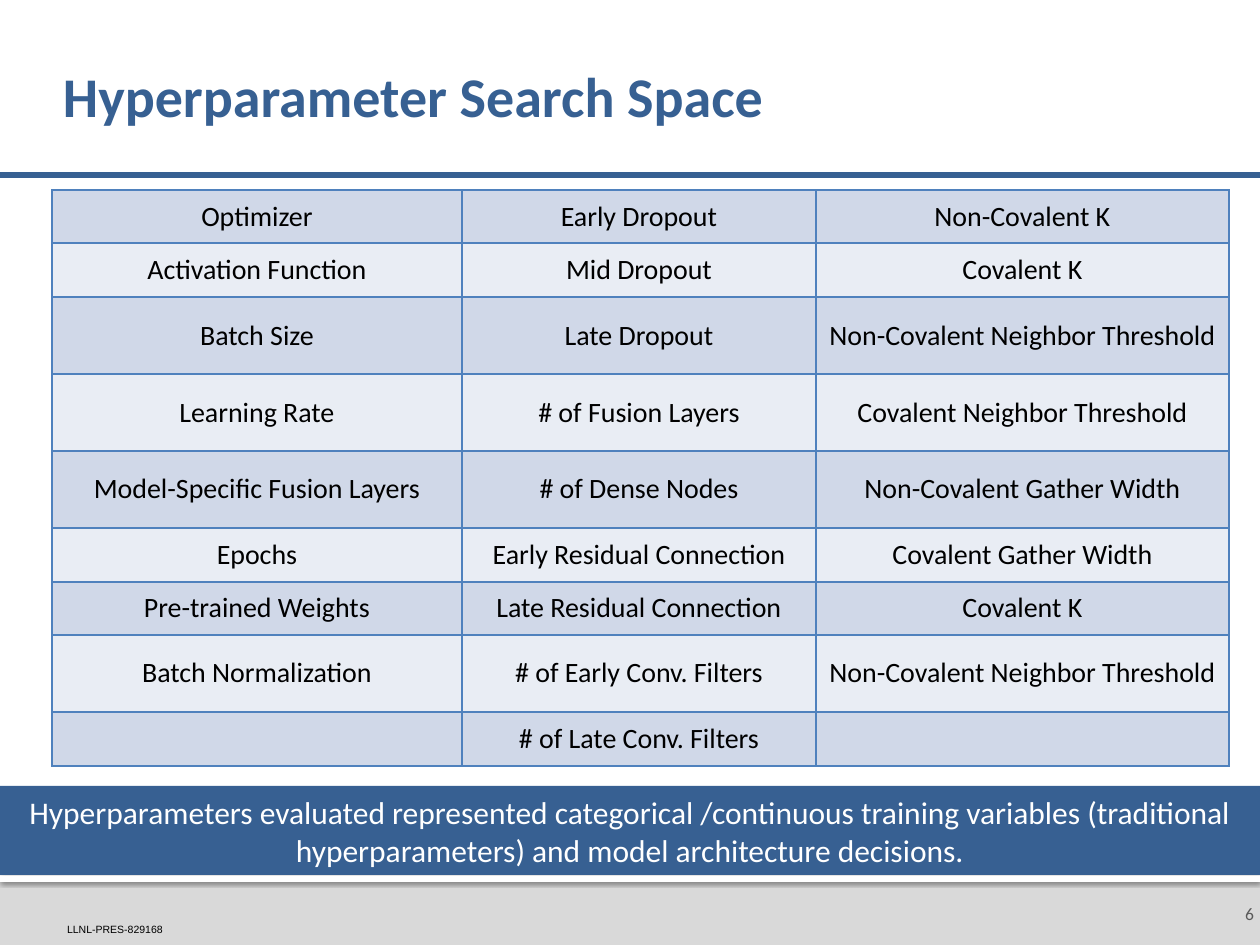
from dataclasses import dataclass

from lxml.etree import SubElement
from pptx import Presentation
from pptx.dml.color import RGBColor
from pptx.enum.shapes import MSO_CONNECTOR, MSO_SHAPE
from pptx.enum.text import MSO_ANCHOR as Anchor
from pptx.enum.text import MSO_AUTO_SIZE as AutoSize
from pptx.enum.text import PP_ALIGN as Align
from pptx.oxml.ns import qn
from pptx.util import Emu, Pt

EMU_PER_PX = 914400 / 126


@dataclass(frozen=True)
class Theme:
    font: str = "Calibri"
    code_font: str = "Arial"
    blue: str = "376092"
    border: str = "4F81BD"
    bands: tuple = ("D0D8E8", "E9EDF4")
    footer: str = "D9D9D9"
    gray: str = "595959"
    white: str = "FFFFFF"
    black: str = "000000"
    title_size: int = 32
    banner_size: int = 18
    cell_size: int = 16
    number_size: int = 10
    code_size: int = 6


THEME = Theme()

SHORT, TALL = 54, 77
COLUMN_WIDTHS = (410, 354, 413)
ROW_HEIGHTS = (SHORT - 1, SHORT, TALL, TALL, TALL, SHORT, SHORT - 1, TALL, SHORT)
HYPERPARAMETERS = (
    ("Optimizer", "Early Dropout", "Non-Covalent K"),
    ("Activation Function", "Mid Dropout", "Covalent K"),
    ("Batch Size", "Late Dropout", "Non-Covalent Neighbor Threshold"),
    ("Learning Rate", "# of Fusion Layers", "Covalent Neighbor Threshold"),
    ("Model-Specific Fusion Layers", "# of Dense Nodes", "Non-Covalent Gather Width"),
    ("Epochs", "Early Residual Connection", "Covalent Gather Width"),
    ("Pre-trained Weights", "Late Residual Connection", "Covalent K"),
    ("Batch Normalization", "# of Early Conv. Filters", "Non-Covalent Neighbor Threshold"),
    ("", "# of Late Conv. Filters", ""),
)


def px(length):
    return Emu(round(length * EMU_PER_PX))


def color(value):
    return RGBColor.from_string(value)


def write(frame, text, size, fill, font=THEME.font, bold=False,
          align=Align.LEFT, anchor=Anchor.MIDDLE, spacing=None):
    """Put one formatted paragraph into a text frame."""
    frame.word_wrap = True
    frame.vertical_anchor = anchor
    paragraph = frame.paragraphs[0]
    paragraph.alignment = align
    if spacing:
        paragraph.line_spacing = spacing
    if text:
        run = paragraph.add_run()
        run.text = text
        run.font.name = font
        run.font.size = Pt(size)
        run.font.bold = bold
        run.font.color.rgb = color(fill)


def add_text(slide, box, text, margins, grow=False, **text_format):
    shape = slide.shapes.add_textbox(*map(px, box))
    frame = shape.text_frame
    (frame.margin_left, frame.margin_top,
     frame.margin_right, frame.margin_bottom) = map(px, margins)
    write(frame, text, **text_format)
    if grow:
        frame.auto_size = AutoSize.SHAPE_TO_FIT_TEXT
    return shape


def add_bar(slide, box, fill):
    shape = slide.shapes.add_shape(MSO_SHAPE.RECTANGLE, *map(px, box))
    shape.shadow.inherit = False
    shape.fill.solid()
    shape.fill.fore_color.rgb = color(fill)
    shape.line.fill.background()
    return shape


def add_shadow(shape):
    effects = shape.element.spPr.find(qn("a:effectLst"))
    shadow = SubElement(effects, qn("a:outerShdw"), blurRad=str(Pt(2.5)),
                        dist=str(Pt(0.8)), dir="5400000", rotWithShape="0")
    tint = SubElement(shadow, qn("a:srgbClr"), val=THEME.black)
    SubElement(tint, qn("a:alpha"), val="60000")


def add_rule(slide, start, end, line_color, width):
    line = slide.shapes.add_connector(MSO_CONNECTOR.STRAIGHT, *map(px, start + end))
    line.line.color.rgb = color(line_color)
    line.line.width = Pt(width)
    SubElement(line.element.spPr, qn("a:effectLst"))


def add_borders(cell, line_color, width):
    properties = cell._tc.get_or_add_tcPr()
    for side in ("a:lnL", "a:lnR", "a:lnT", "a:lnB"):
        line = SubElement(properties, qn(side), w=str(Pt(width)))
        fill = SubElement(line, qn("a:solidFill"))
        SubElement(fill, qn("a:srgbClr"), val=line_color)


def add_grid(slide, left, top, rows):
    frame = slide.shapes.add_table(
        len(rows), len(COLUMN_WIDTHS), px(left), px(top),
        px(sum(COLUMN_WIDTHS)), px(sum(ROW_HEIGHTS)))
    table = frame.table
    table.first_row = table.horz_banding = False
    for column, width in zip(table.columns, COLUMN_WIDTHS):
        column.width = px(width)
    for index, (row, height, texts) in enumerate(zip(table.rows, ROW_HEIGHTS, rows)):
        row.height = px(height)
        for cell, text in zip(row.cells, texts):
            add_borders(cell, THEME.border, 1)
            cell.fill.solid()
            cell.fill.fore_color.rgb = color(THEME.bands[index % 2])
            write(cell.text_frame, text, THEME.cell_size, THEME.black, align=Align.CENTER)
            cell.vertical_anchor = Anchor.MIDDLE


def main():
    presentation = Presentation()
    presentation.slide_width, presentation.slide_height = px(1260), px(945)
    slide = presentation.slides.add_slide(presentation.slide_layouts[6])

    # Footer
    add_bar(slide, (0, 876, 1260, 69), THEME.footer)
    add_shadow(add_bar(slide, (0, 876, 1260, 6), THEME.white))
    add_text(slide, (1216, 882, 44, 63), "6", (13, 6, 6, 6),
             size=THEME.number_size, fill=THEME.gray, align=Align.RIGHT)
    add_text(slide, (67, 923, 121, 13), "LLNL-PRES-829168", (0, 0, 0, 0), grow=True,
             size=THEME.code_size, fill=THEME.black, font=THEME.code_font,
             anchor=Anchor.BOTTOM)

    # Title and rule
    add_rule(slide, (-1, 175), (1260, 175), THEME.blue, 3)
    add_text(slide, (63, 30, 1134, 139), "Hyperparameter Search Space", (0, 6, 6, 6),
             size=THEME.title_size, fill=THEME.blue, bold=True, spacing=0.9)

    # Search space table
    add_grid(slide, 52, 190, HYPERPARAMETERS)

    # Summary banner
    banner = add_bar(slide, (0, 786, 1260, 89), THEME.blue)
    write(banner.text_frame,
          "Hyperparameters evaluated represented categorical /continuous training "
          "variables (traditional hyperparameters) and model architecture decisions.",
          THEME.banner_size, THEME.white, align=Align.CENTER, anchor=Anchor.BOTTOM)
    banner.text_frame.auto_size = AutoSize.SHAPE_TO_FIT_TEXT

    presentation.save("out.pptx")


if __name__ == "__main__":
    main()
